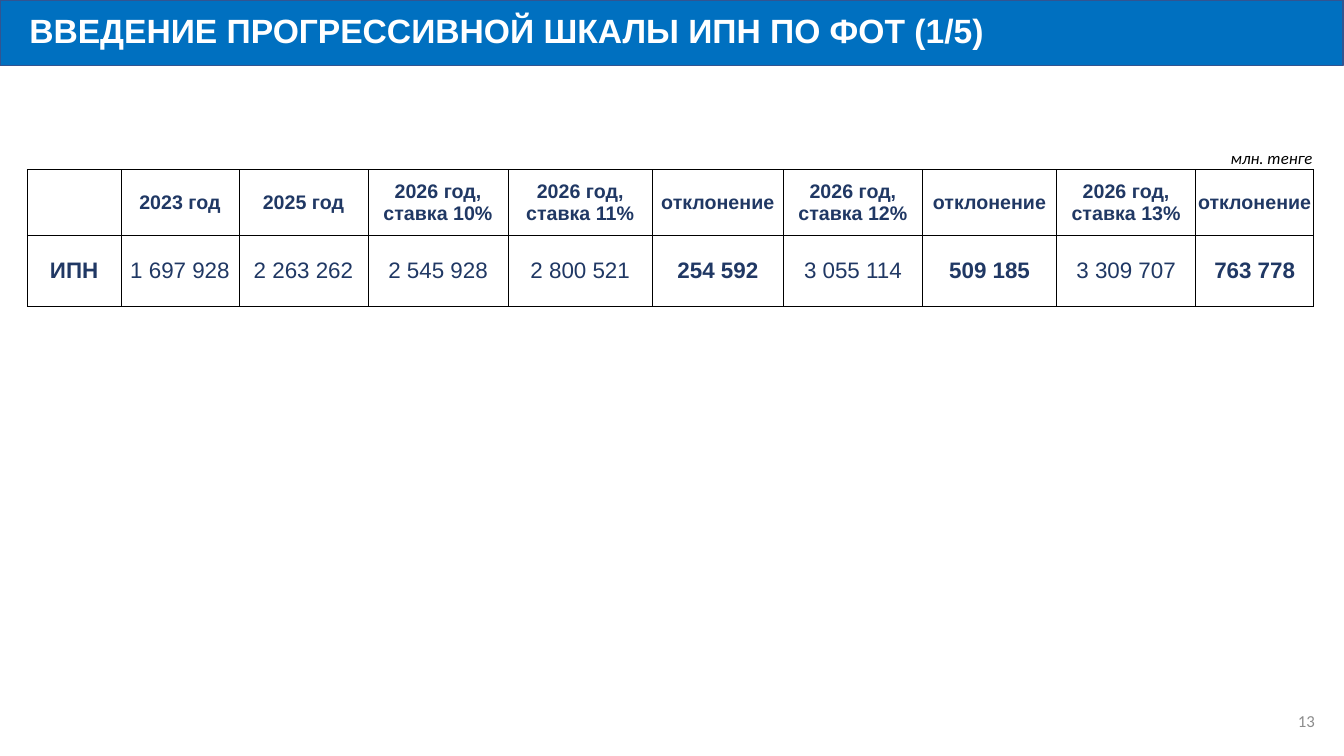
from dataclasses import dataclass

from lxml import etree
from pptx import Presentation
from pptx import util as u
from pptx.dml.color import RGBColor
from pptx.enum import text
from pptx.oxml.ns import qn

PX = 9144  # EMU in one px, 100 px to the inch


@dataclass(frozen=True)
class Theme:
    heading_font: str = "Arial"
    note_font: str = "Calibri"
    band: str = "0070C0"
    band_line: str = "325491"
    white: str = "FFFFFF"
    navy: str = "203864"
    black: str = "000000"
    gray: str = "8C8C8C"
    title_size: int = 24
    value_size: int = 16
    header_size: int = 14
    note_size: int = 12
    border_width: float = 0.5


@dataclass(frozen=True)
class Style:
    font: str
    size: int
    color: str
    bold: bool = False
    italic: bool = False


@dataclass(frozen=True)
class Column:
    width: int
    header: str
    value: str
    bold: bool = False


THEME = Theme()
TITLE = Style(THEME.heading_font, THEME.title_size, THEME.white, bold=True)
HEADER = Style(THEME.heading_font, THEME.header_size, THEME.navy, bold=True)
VALUE = Style(THEME.heading_font, THEME.value_size, THEME.navy)
STRONG_VALUE = Style(THEME.heading_font, THEME.value_size, THEME.navy, bold=True)
UNIT = Style(THEME.note_font, THEME.note_size, THEME.black, italic=True)
PAGE_NUMBER = Style(THEME.note_font, THEME.note_size, THEME.gray)

COLUMNS = [
    Column(93, "", "ИПН", bold=True),
    Column(117, "2023 год", "1 697 928"),
    Column(128, "2025 год", "2 263 262"),
    Column(139, "2026 год, ставка 10%", "2 545 928"),
    Column(143, "2026 год, ставка 11%", "2 800 521"),
    Column(130, "отклонение", "254 592", bold=True),
    Column(138, "2026 год, ставка 12%", "3 055 114"),
    Column(133, "отклонение", "509 185", bold=True),
    Column(138, "2026 год, ставка 13%", "3 309 707"),
    Column(117, "отклонение", "763 778", bold=True),
]
ROW_HEIGHTS = [65, 65, 71]


def px(length: int) -> u.Emu:
    return u.Emu(length * PX)


def write(frame, words: str, style: Style, align):
    para = frame.paragraphs[0]
    para.alignment = align
    span = para.add_run()
    span.text = words
    span.font.name = style.font
    span.font.size = u.Pt(style.size)
    span.font.bold = style.bold
    span.font.italic = style.italic
    span.font.color.rgb = RGBColor.from_string(style.color)
    return para


def set_borders(cell, visible: str) -> None:
    """Draw the sides named in visible (of L, R, T, B) and hide the others."""
    properties = cell._tc.get_or_add_tcPr()
    for side in "LRTB":
        line = etree.SubElement(properties, qn(f"a:ln{side}"))
        line.set("w", str(u.Pt(THEME.border_width)))
        if side in visible:
            fill = etree.SubElement(line, qn("a:solidFill"))
            etree.SubElement(fill, qn("a:srgbClr")).set("val", THEME.black)
        else:
            etree.SubElement(line, qn("a:noFill"))


def fill_cell(cell, words: str, style: Style, align, anchor) -> None:
    cell.margin_left = cell.margin_right = cell.margin_top = px(1)
    cell.margin_bottom = 0
    cell.vertical_anchor = anchor
    if words:
        write(cell.text_frame, words, style, align)


def add_title(page, words: str) -> None:
    title = page.shapes.title
    title.left, title.top, title.width, title.height = map(px, (0, 0, 1332, 65))
    title.fill.solid()
    title.fill.fore_color.rgb = RGBColor.from_string(THEME.band)
    title.line.color.rgb = RGBColor.from_string(THEME.band_line)
    title.line.width = u.Pt(1)
    frame = title.text_frame
    frame.auto_size = text.MSO_AUTO_SIZE.NONE
    frame.word_wrap = True
    frame.vertical_anchor = text.MSO_ANCHOR.MIDDLE
    para = write(frame, words, TITLE, text.PP_ALIGN.LEFT)
    para.line_spacing = 0.9
    para._p.get_or_add_pPr().set("marL", str(px(19)))


def add_tax_table(page) -> None:
    width = sum(column.width for column in COLUMNS)
    table = page.shapes.add_table(len(ROW_HEIGHTS), len(COLUMNS), px(27), px(103),
                                  px(width), px(sum(ROW_HEIGHTS))).table
    table.first_row = table.horz_banding = False
    for row, height in zip(table.rows, ROW_HEIGHTS):
        row.height = px(height)

    center, middle = text.PP_ALIGN.CENTER, text.MSO_ANCHOR.MIDDLE
    for index, column in enumerate(COLUMNS):
        table.columns[index].width = px(column.width)
        unit, header, value = (table.cell(row, index) for row in range(3))
        words = "млн. тенге" if index == len(COLUMNS) - 1 else ""
        fill_cell(unit, words, UNIT, text.PP_ALIGN.RIGHT, text.MSO_ANCHOR.BOTTOM)
        fill_cell(header, column.header, HEADER, center, middle)
        fill_cell(value, column.value, STRONG_VALUE if column.bold else VALUE,
                  center, middle)
        for cell, visible in ((unit, "B"), (header, "LRTB"), (value, "LRTB")):
            set_borders(cell, visible)
            cell.fill.background()


def add_page_number(page, number: str) -> None:
    box = page.shapes.add_textbox(px(1014), px(695), px(300), px(40))
    box.text_frame.word_wrap = True
    box.text_frame.vertical_anchor = text.MSO_ANCHOR.MIDDLE
    write(box.text_frame, number, PAGE_NUMBER, text.PP_ALIGN.RIGHT)


def main() -> None:
    deck = Presentation()
    deck.slide_width, deck.slide_height = px(1333), px(750)
    page = deck.slides.add_slide(deck.slide_layouts.get_by_name("Title Only"))
    add_title(page, "ВВЕДЕНИЕ ПРОГРЕССИВНОЙ ШКАЛЫ ИПН ПО ФОТ (1/5)")
    add_tax_table(page)
    add_page_number(page, "13")
    deck.save("out.pptx")


if __name__ == "__main__":
    main()
